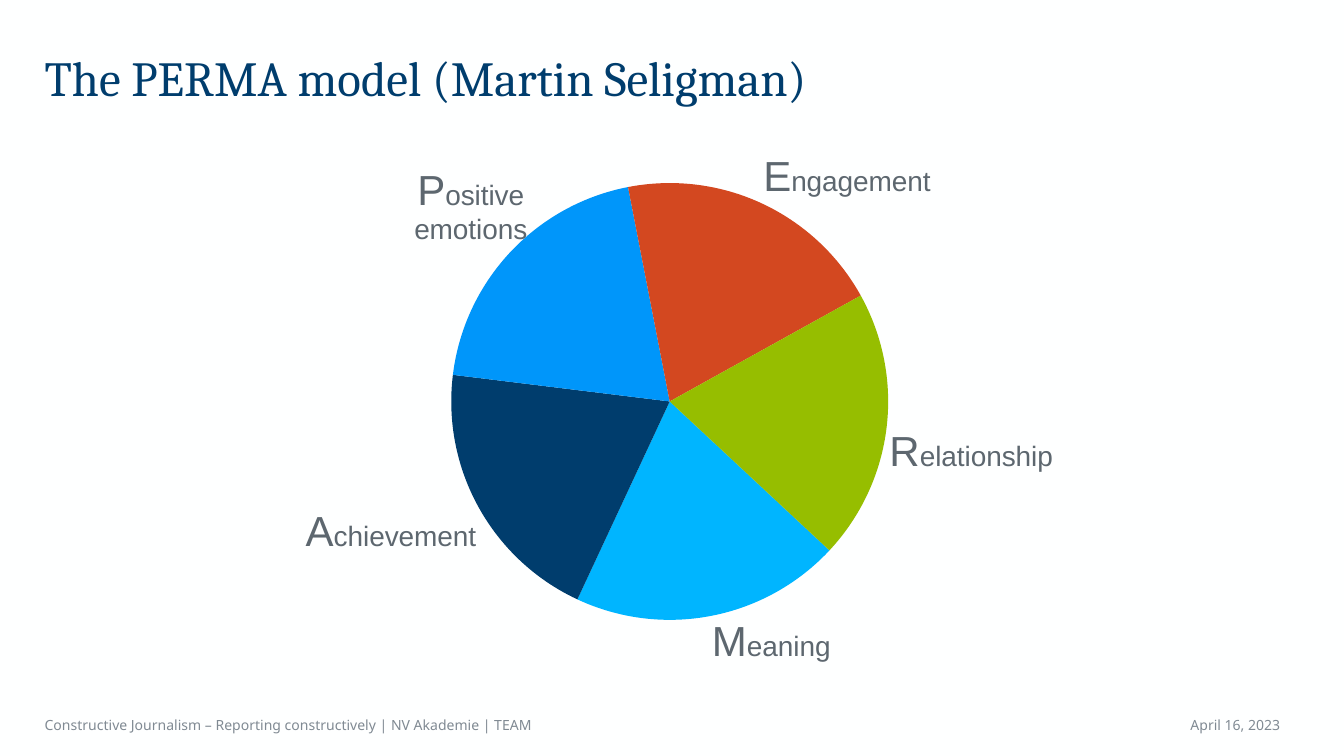
from lxml.etree import SubElement
from pptx import Presentation
from pptx.chart.data import CategoryChartData
from pptx.dml.color import RGBColor
from pptx.enum.chart import XL_CHART_TYPE, XL_LABEL_POSITION
from pptx.enum.text import MSO_ANCHOR, PP_ALIGN
from pptx.oxml.ns import qn
from pptx.util import Cm, Pt

WHITE = RGBColor(0xFE, 0xFF, 0xFF)
NAVY = RGBColor(0x00, 0x3D, 0x6D)
SLATE = RGBColor(0x5D, 0x67, 0x6F)
GREY = RGBColor(0x80, 0x8A, 0x93)
SKY = RGBColor(0x00, 0xB5, 0xFF)
BLUE = RGBColor(0x00, 0x96, 0xFA)
RED = RGBColor(0xD3, 0x48, 0x20)
GREEN = RGBColor(0x96, 0xBE, 0x00)

TITLE = "The PERMA model (Martin Seligman)"
SLICES = [
    ("Meaning", 0.2, SKY, None),
    ("Achievement", 0.2, NAVY, None),
    ("Positive emotions", 0.2, BLUE, {"x": 0.02, "y": -0.01}),
    ("Engagement", 0.2, RED, None),
    ("Relationship", 0.2, GREEN, None),
]
FOOTS = [
    ("Constructive Journalism – Reporting constructively | NV Akademie | TEAM",
     2, 39.62, PP_ALIGN.LEFT),
    ("April 16, 2023", 52.76, 12, PP_ALIGN.RIGHT),
]
START = 133
PIE = {"layoutTarget": "inner", "xMode": "edge", "yMode": "edge",
       "x": 0.28, "y": 0.09, "w": 0.45, "h": 0.81}


def add_run(para, text, size, font, color):
    run = para.add_run()
    run.text = text
    run.font.size = Pt(size)
    run.font.name = font
    run.font.bold = False
    run.font.color.rgb = color


def set_frame(frame, anchor):
    frame.word_wrap = True
    frame.vertical_anchor = anchor
    frame.margin_left = frame.margin_right = Cm(0.25)
    frame.margin_top = frame.margin_bottom = Cm(0.13)
    return frame.paragraphs[0]


def add_title(slide):
    title = slide.shapes.title
    title.left, title.top = Cm(2), Cm(2)
    title.width, title.height = Cm(62.76), Cm(3.25)
    para = set_frame(title.text_frame, MSO_ANCHOR.TOP)
    para.alignment = PP_ALIGN.LEFT
    para.line_spacing = Pt(91)
    add_run(para, TITLE, 70, "Cambria", NAVY)


def add_foot(slide, text, left, width, align):
    box = slide.shapes.add_textbox(Cm(left), Cm(35.74), Cm(width), Cm(1.6))
    para = set_frame(box.text_frame, MSO_ANCHOR.MIDDLE)
    para.alignment = align
    add_run(para, text, 20, "Noto Sans", GREY)


def set_layout(node, spot, parts):
    layout = node.find(qn("c:layout"))
    if layout is None:
        layout = SubElement(node, qn("c:layout"))
        node.insert(spot, layout)
    manual = SubElement(layout, qn("c:manualLayout"))
    for tag, val in parts.items():
        SubElement(manual, qn(f"c:{tag}")).set("val", str(val))


def add_labels(series):
    labels = series.data_labels
    labels.show_value = True
    labels.number_format = "0%"
    labels.number_format_is_linked = False
    labels.position = XL_LABEL_POSITION.OUTSIDE_END
    labels.font.size = Pt(30)
    labels.font.bold = True
    labels.font.name = "Arial"
    labels.font.color.rgb = SLATE
    for i, (name, _, color, shift) in enumerate(SLICES):
        point = series.points[i]
        point.format.fill.solid()
        point.format.fill.fore_color.rgb = color
        point.format.line.fill.background()
        label = point.data_label
        para = label.text_frame.paragraphs[0]
        add_run(para, name[0], 60, "Arial", SLATE)
        add_run(para, name[1:], 40, "Arial", SLATE)
        label.position = XL_LABEL_POSITION.OUTSIDE_END
        if shift:
            node = labels._element.findall(qn("c:dLbl"))[i]
            set_layout(node, 1, shift)


def add_pie(slide):
    data = CategoryChartData(number_format="0%")
    data.categories = [str(i + 1) for i in range(len(SLICES))]
    data.add_series("Series 1", [part[1] for part in SLICES])
    chart = slide.shapes.add_chart(
        XL_CHART_TYPE.PIE, Cm(9), Cm(6.78), Cm(49), Cm(27.18), data).chart
    chart.has_title = chart.has_legend = False
    chart.font.size = Pt(18)
    chart.font.name = "Noto Sans"
    chart.font.color.rgb = SLATE
    plot = chart.plots[0]
    plot.vary_by_categories = True
    add_labels(plot.series[0])
    angle = plot._element.find(qn("c:firstSliceAng"))
    if angle is None:
        angle = SubElement(plot._element, qn("c:firstSliceAng"))
    angle.set("val", str(START))
    set_layout(plot._element.getparent(), 0, PIE)


def main():
    deck = Presentation()
    deck.slide_width, deck.slide_height = Cm(67.72), Cm(38.1)
    slide = deck.slides.add_slide(deck.slide_layouts[5])
    slide.background.fill.solid()
    slide.background.fill.fore_color.rgb = WHITE
    add_title(slide)
    add_pie(slide)
    for foot in FOOTS:
        add_foot(slide, *foot)
    deck.save("out.pptx")


if __name__ == "__main__":
    main()
